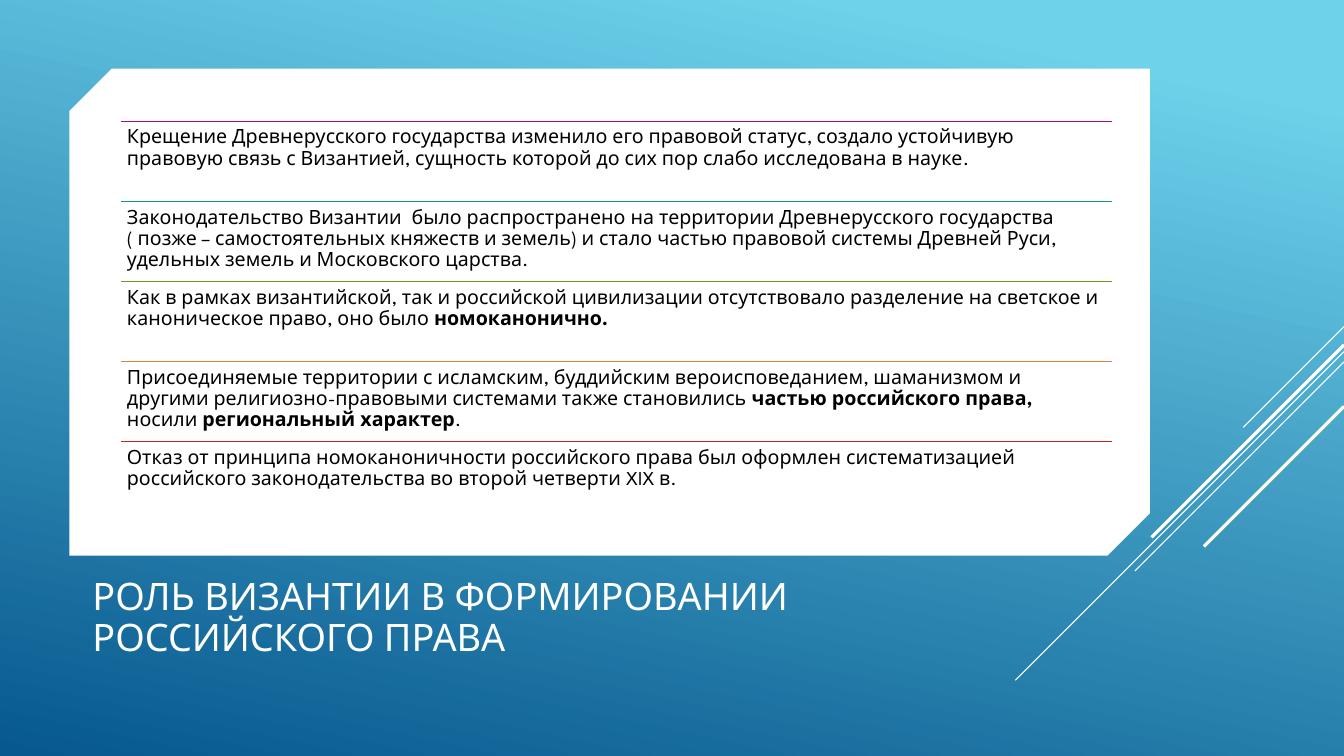
from lxml.etree import SubElement
from pptx import Presentation
from pptx.dml.color import RGBColor
from pptx.enum.shapes import MSO_CONNECTOR, MSO_SHAPE
from pptx.enum.text import MSO_ANCHOR
from pptx.oxml.ns import qn
from pptx.util import Cm, Pt

FONT = "League Spartan"
WHITE = "FFFFFF"
SLIDE_WIDTH, SLIDE_HEIGHT = 33.87, 19.05
TITLE = "РОЛЬ ВИЗАНТИИ В ФОРМИРОВАНИИ РОССИЙСКОГО ПРАВА"

# Each thesis: rule colour, then text pieces alternating regular and bold
THESES = [
    ("A50E82", ["Крещение Древнерусского государства изменило его правовой статус, создало устойчивую "
                "правовую связь с Византией, сущность которой до сих пор слабо исследована в науке."]),
    ("14967C", ["Законодательство Византии  было распространено на территории Древнерусского государства "
                "( позже – самостоятельных княжеств и земель) и стало частью правовой системы Древней Руси, "
                "удельных земель и Московского царства."]),
    ("6A9E1F", ["Как в рамках византийской, так и российской цивилизации отсутствовало разделение на светское и "
                "каноническое право, оно было ", "номоканонично."]),
    ("E87D37", ["Присоединяемые территории с исламским, буддийским вероисповеданием, шаманизмом и "
                "другими религиозно-правовыми системами также становились ", "частью российского права,",
                " носили ", "региональный характер", "."]),
    ("C62324", ["Отказ от принципа номоканоничности российского права был оформлен систематизацией "
                "российского законодательства во второй четверти XIX в."]),
]

# Each ray: start height on the right edge, horizontal and vertical reach, line width
RAYS = [
    (8.23, 2.54, 0.75),
    (8.86, 8.28, 0.75),
    (9.12, 5.27, 0.75),
    (8.69, 4.85, 2.25),
    (10.24, 3.53, 2.25),
]


def color(hex_string):
    """Return the colour for a hex string."""
    return RGBColor.from_string(hex_string)


def set_all(target, values):
    """Set every attribute named in a dict of format values."""
    for name, value in values.items():
        setattr(target, name, value)


def add_rule(slide, start, end, hex_string, width):
    """Draw a straight line without a shadow."""
    ends = [Cm(length) for length in (*start, *end)]
    rule = slide.shapes.add_connector(MSO_CONNECTOR.STRAIGHT, *ends)
    rule.line.color.rgb = color(hex_string)
    rule.line.width = Pt(width)
    SubElement(rule._element.spPr, qn("a:effectLst"))


def add_block(slide, box, kind):
    """Add a preset shape with no outline and no shadow."""
    block = slide.shapes.add_shape(kind, *[Cm(length) for length in box])
    block.shadow.inherit = False
    block.line.fill.background()
    return block


def add_text(slide, box, pieces, size, hex_string, frame_format):
    """Add a wrapped paragraph whose pieces alternate regular and bold."""
    frame = slide.shapes.add_textbox(*[Cm(length) for length in box]).text_frame
    set_all(frame, {"word_wrap": True, **frame_format})
    paragraph = frame.paragraphs[0]
    paragraph.line_spacing = 0.9
    for index, piece in enumerate(pieces):
        run = paragraph.add_run()
        run.text = piece
        set_all(run.font, {"name": FONT, "size": Pt(size), "bold": index % 2 == 1})
        run.font.color.rgb = color(hex_string)


def add_backdrop(slide, box):
    """Fill the box with the blue gradient."""
    fill = add_block(slide, box, MSO_SHAPE.RECTANGLE).fill
    fill.gradient()
    fill.gradient_angle = 258
    for stop, (position, shade) in zip(fill.gradient_stops, [(0.1, "6ED2EB"), (1, "06588E")]):
        stop.position = position
        stop.color.rgb = color(shade)


def add_rays(slide, box):
    """Draw the diagonal rays running down from the right edge of the box."""
    left, top, width, _ = box
    right = left + width
    for start, reach, weight in RAYS:
        add_rule(slide, (right, top + start), (right - reach, top + start + reach), WHITE, weight)


def add_theses(slide, box):
    """Place the white panel and its evenly spaced ruled theses."""
    left, top, width, _ = box
    panel = add_block(slide, box, MSO_SHAPE.SNIP_2_DIAG_RECTANGLE)
    panel.adjustments[0], panel.adjustments[1] = 0.087, 0
    panel.fill.solid()
    panel.fill.fore_color.rgb = color(WHITE)

    row_left, row_width, row_height = left + 1.3, width - 2.26, 2.02
    margins = dict.fromkeys(("margin_left", "margin_top", "margin_right", "margin_bottom"), Cm(0.15))
    for index, (shade, pieces) in enumerate(THESES):
        row_top = top + 1.32 + index * row_height
        add_rule(slide, (row_left, row_top), (row_left + row_width, row_top), shade, 0.75)
        add_text(slide, (row_left, row_top, row_width, row_height), pieces, 14, "000000", margins)


def add_title(slide, box):
    """Set the title against the bottom of the box."""
    add_text(slide, box, [TITLE], 27, WHITE, {"vertical_anchor": MSO_ANCHOR.BOTTOM})


def main():
    """Build and save the slide."""
    deck = Presentation()
    set_all(deck, {"slide_width": Cm(SLIDE_WIDTH), "slide_height": Cm(SLIDE_HEIGHT)})
    slide = deck.slides.add_slide(deck.slide_layouts[6])
    whole = (0, 0, SLIDE_WIDTH, SLIDE_HEIGHT)
    add_backdrop(slide, whole)
    add_title(slide, (2.08, 14.4, 24.18, 2.34))
    add_theses(slide, (1.75, 1.73, 27.23, 12.27))
    add_rays(slide, whole)
    deck.save("out.pptx")


if __name__ == "__main__":
    main()
